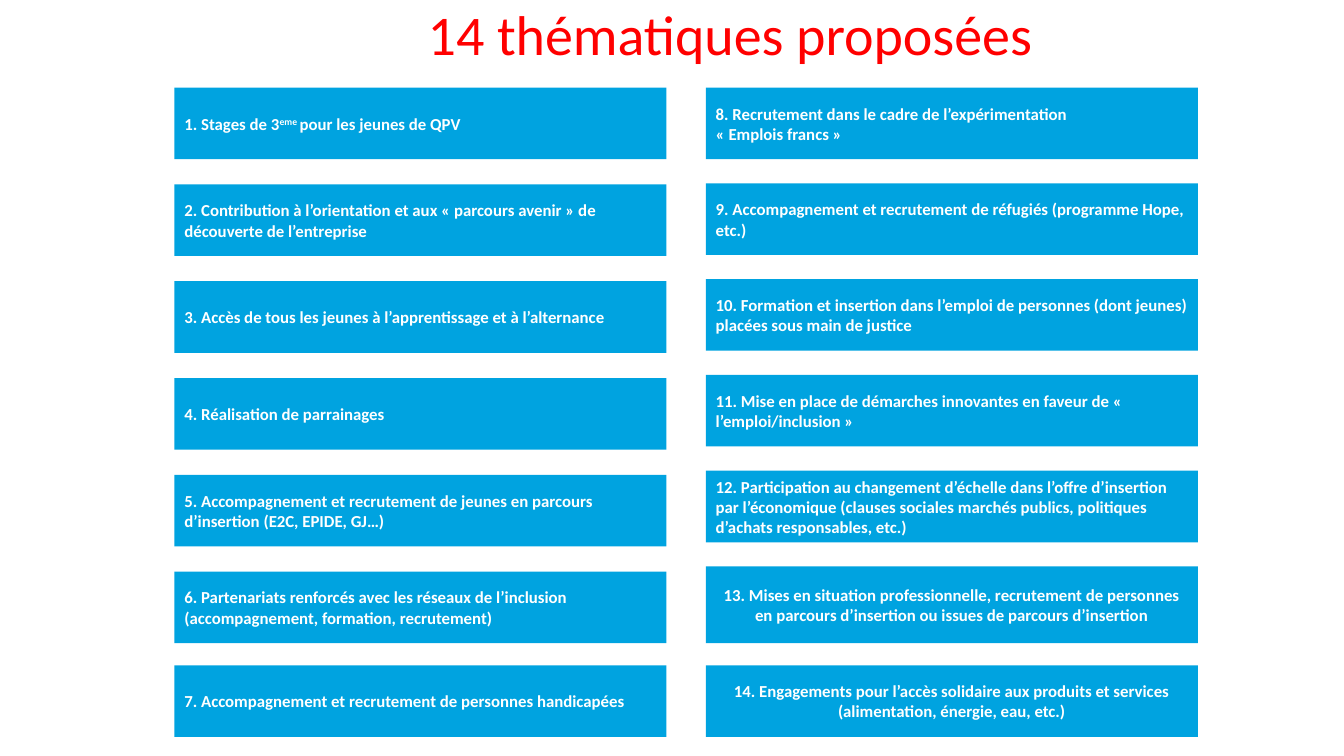
from dataclasses import dataclass

from pptx import Presentation
from pptx.dml.color import RGBColor as Color
from pptx.enum.shapes import MSO_SHAPE as Shape
from pptx.enum.text import MSO_ANCHOR as Anchor, PP_ALIGN as Align
from pptx.util import Pt

PX = 9144  # 100 px to the inch


@dataclass(frozen=True)
class Theme:
    font: str = "Calibri"
    title_size: int = 40
    box_size: int = 12
    title: Color = Color(0xFF, 0x00, 0x00)
    fill: Color = Color(0x00, 0xA3, 0xE0)
    text: Color = Color(0xFF, 0xFF, 0xFF)


THEME = Theme()

# Grid of theme boxes
TOP, LAST_TOP = 87, 660
BOX_WIDTH, BOX_HEIGHT, TALL_HEIGHT = 488, 71, 76
TALL, CENTRED = {13}, {13, 14}

# Each entry is a list of paragraphs, each paragraph a list of runs;
# a run starting with ^ is superscript
LEFT_THEMES = [
    [["1. Stages de 3", "^eme ", "pour les jeunes de QPV"]],
    [["2. Contribution à l’orientation et aux « parcours avenir » de découverte de l’entreprise"]],
    [["3. Accès de tous les jeunes à l’apprentissage et à l’alternance"]],
    [["4. Réalisation de parrainages"]],
    [["5. Accompagnement et recrutement de jeunes en parcours d’insertion (E2C, EPIDE, GJ…)"]],
    [["6. Partenariats renforcés avec les réseaux de l’inclusion "
      "(accompagnement, formation, recrutement)"]],
    [["7. Accompagnement et recrutement de personnes handicapées"]],
]
RIGHT_THEMES = [
    [["8. Recrutement dans le cadre de l’expérimentation"], ["« Emplois francs »"]],
    [["9. Accompagnement et recrutement de réfugiés (programme Hope, etc.)"]],
    [["10. Formation et insertion dans l’emploi de personnes (dont jeunes) "
      "placées sous main de justice"]],
    [["11. Mise en place de démarches innovantes en faveur de « l’emploi/inclusion »"]],
    [["12. Participation au changement d’échelle dans l’offre d’insertion par l’économique "
      "(clauses sociales marchés publics, politiques d’achats responsables, etc.)"]],
    [["13. Mises en situation professionnelle, recrutement de personnes "
      "en parcours d’insertion ou issues de parcours d’insertion"]],
    [["14. Engagements pour l’accès solidaire aux produits et services "
      "(alimentation, énergie, eau, etc.)"]],
]
# left edge, row pitch, number of the first theme, themes
COLUMNS = [(173, 96, 1, LEFT_THEMES), (700, 95, 8, RIGHT_THEMES)]


def px(*lengths):
    return [length * PX for length in lengths]


def set_frame(frame, side, end):
    frame.word_wrap = True
    frame.vertical_anchor = Anchor.MIDDLE
    frame.margin_left, frame.margin_right = px(side, side)
    frame.margin_top, frame.margin_bottom = px(end, end)


def style_font(font, size, color, bold=False):
    font.name = THEME.font
    font.size = Pt(size)
    font.bold = bold
    font.color.rgb = color


def add_title(page, text):
    box = page.shapes.add_textbox(*px(224, 3, 1000, 69))
    set_frame(box.text_frame, 10, 5)
    para = box.text_frame.paragraphs[0]
    para.text = text
    para.alignment = Align.CENTER
    para.line_spacing = 0.9
    style_font(para.runs[0].font, THEME.title_size, THEME.title)


def add_theme_box(page, left, top, height, align, paragraphs):
    box = page.shapes.add_shape(Shape.RECTANGLE, *px(left, top, BOX_WIDTH, height))
    box.shadow.inherit = False
    box.fill.solid()
    box.fill.fore_color.rgb = THEME.fill
    box.line.fill.background()
    frame = box.text_frame
    set_frame(frame, 10, 10)
    for index, runs in enumerate(paragraphs):
        para = frame.add_paragraph() if index else frame.paragraphs[0]
        para.alignment = align
        for text in runs:
            span = para.add_run()
            span.text = text.lstrip("^")
            style_font(span.font, THEME.box_size, THEME.text, bold=True)
            if text.startswith("^"):
                span._r.get_or_add_rPr().set("baseline", "30000")


def add_column(page, left, pitch, first, themes):
    for row, paragraphs in enumerate(themes):
        number = first + row
        is_last = row == len(themes) - 1
        top = LAST_TOP if is_last else TOP + row * pitch
        height = TALL_HEIGHT if number in TALL else BOX_HEIGHT
        align = Align.CENTER if number in CENTRED else Align.LEFT
        add_theme_box(page, left, top, height, align, paragraphs)


def main():
    deck = Presentation()
    deck.slide_width, deck.slide_height = px(1333, 750)
    page = deck.slides.add_slide(deck.slide_layouts[6])

    # Two columns of themes, then the title
    for column in COLUMNS:
        add_column(page, *column)
    add_title(page, "14 thématiques proposées")

    deck.save("out.pptx")


if __name__ == "__main__":
    main()
